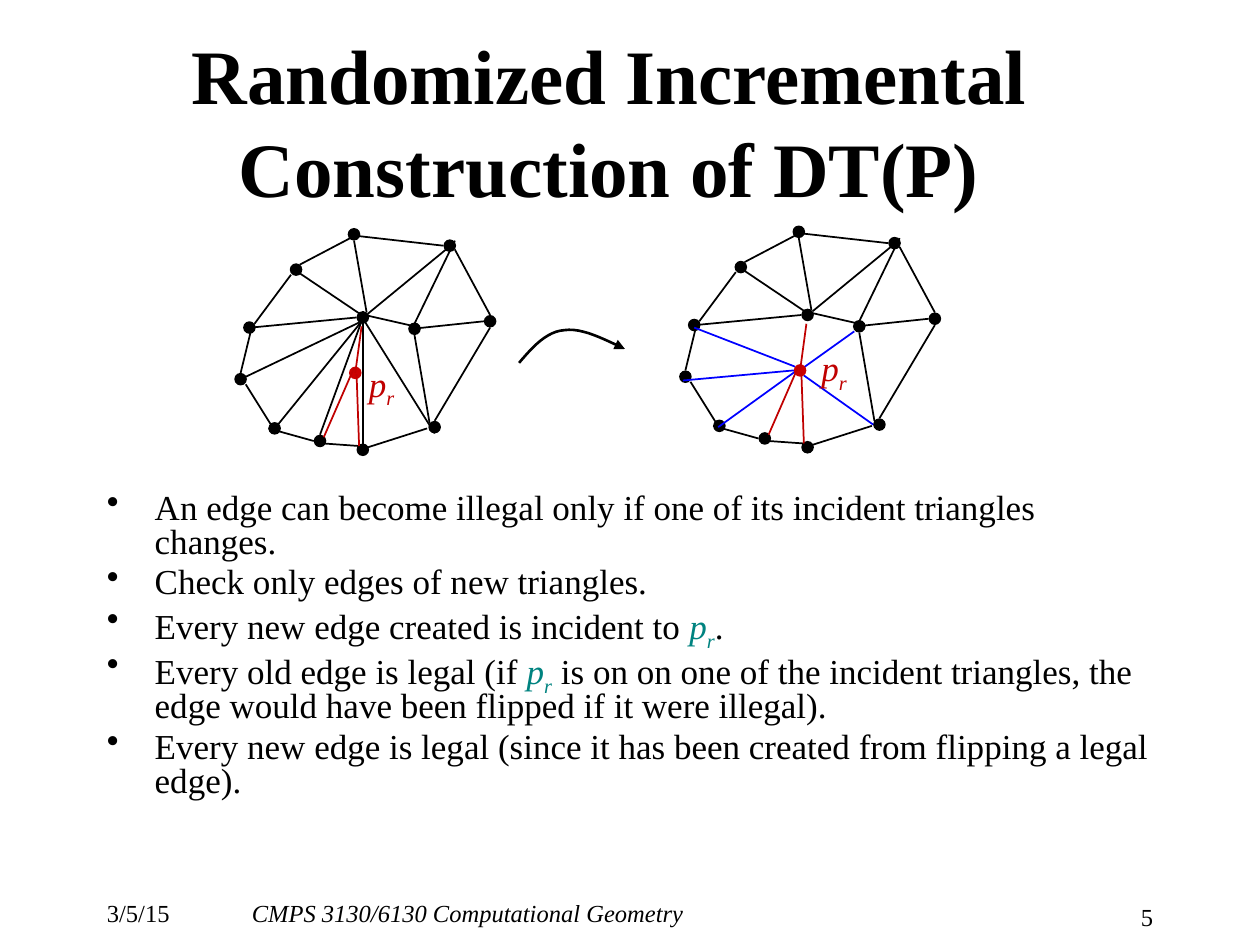
from typing import NamedTuple

from lxml import etree
from pptx import Presentation, util as u
from pptx.dml.color import RGBColor
from pptx.enum import shapes, text
from pptx.oxml.ns import qn

BLACK = RGBColor(0x00, 0x00, 0x00)
RED = RGBColor(0xC0, 0x00, 0x00)
BRIGHT_RED = RGBColor(0xCC, 0x00, 0x00)
BLUE = RGBColor(0x00, 0x00, 0xFF)
TEAL = RGBColor(0x00, 0x83, 0x80)
FONT = "Times New Roman"

# The slide is a grid of 1000 columns and 750 rows
WIDTH, HEIGHT = u.Inches(10), u.Inches(7.5)
COLUMNS, ROWS = 1000, 750
DOT = 10


class Point(NamedTuple):
    col: float
    row: float


class Edge(NamedTuple):
    start: Point
    end: Point
    color: RGBColor = BLACK


class Box(NamedTuple):
    col: float
    row: float
    cols: float
    rows: float


class Piece(NamedTuple):
    words: str
    color: RGBColor = BLACK
    italic: bool = False
    subscript: bool = False


def edges(color: RGBColor, *ends: tuple) -> list[Edge]:
    return [Edge(Point(a, b), Point(c, d), color) for a, b, c, d in ends]


def p_r(color: RGBColor) -> list[Piece]:
    return [Piece("p", color, True), Piece("r", color, True, True)]


# Vertices and edges that both triangulations have
VERTICES = [Point(*at) for at in (
    (218, 340), (191, 301), (198, 260), (235, 214), (288, 252), (329, 261),
    (281, 186), (357, 195), (345, 339), (288, 357), (254, 350), (389, 255))]
COMMON_EDGES = edges(
    BLACK,
    (278, 189, 238, 210), (202, 257, 231, 218), (191, 296, 200, 259),
    (215, 337, 195, 305), (249, 350, 213, 340), (285, 354, 257, 352),
    (339, 340, 292, 355), (329, 266, 341, 336), (285, 249, 329, 259),
    (238, 217, 287, 250), (281, 191, 291, 248), (354, 198, 292, 249),
    (361, 191, 327, 261), (281, 187, 352, 195), (361, 198, 389, 250),
    (389, 260, 345, 334), (384, 255, 327, 261), (199, 260, 283, 252))
NEW_POINT = Point(282, 296)
NEW_EDGES = edges(RED, (282, 296, 287, 259), (257, 347, 281, 292),
                  (285, 354, 283, 297))
# Edges before and after flipping
OLD_EDGES = edges(BLACK, (193, 300, 285, 256), (219, 339, 292, 249),
                  (254, 345, 287, 255), (288, 359, 288, 247),
                  (345, 344, 290, 256))
FLIPPED_EDGES = edges(BLUE, (198, 262, 278, 293), (189, 304, 277, 296),
                      (340, 339, 285, 300), (325, 265, 283, 295),
                      (217, 341, 278, 297))
AFTER_SHIFT = Point(353, -2)

FLIP_CURVE = [[Point(412, 288), Point(423, 275), Point(434, 263), Point(448, 262)],
              [Point(448, 262), Point(462, 260), Point(479, 269), Point(496, 277)]]

BULLETS = [
    [Piece("An edge can become illegal only if one of its incident triangles changes.")],
    [Piece("Check only edges of new triangles.")],
    [Piece("Every new edge created is incident to "), *p_r(TEAL), Piece(".")],
    [Piece("Every old edge is legal (if "), *p_r(TEAL),
     Piece(" is on on one of the incident triangles, the edge would have been "
           "flipped if it were illegal).")],
    [Piece("Every new edge is legal (since it has been created from flipping a legal edge).")],
]


def x(col: float) -> int:
    return round(WIDTH * col / COLUMNS)


def y(row: float) -> int:
    return round(HEIGHT * row / ROWS)


def draw_dot(slide, center: Point, color: RGBColor = BLACK) -> None:
    dot = slide.shapes.add_shape(
        shapes.MSO_SHAPE.OVAL, x(center.col - DOT / 2), y(center.row - DOT / 2),
        x(DOT), y(DOT))
    dot.shadow.inherit = False
    dot.fill.solid()
    dot.fill.fore_color.rgb = color
    dot.line.fill.background()


def draw_edge(slide, edge: Edge, shift: Point) -> None:
    line = slide.shapes.add_connector(
        shapes.MSO_CONNECTOR.STRAIGHT,
        x(edge.start.col + shift.col), y(edge.start.row + shift.row),
        x(edge.end.col + shift.col), y(edge.end.row + shift.row))
    line.line.color.rgb = edge.color
    line.line.width = u.Pt(1)
    etree.SubElement(line._element.spPr, qn("a:effectLst"))


def draw_triangulation(slide, own_edges: list[Edge], shift: Point) -> None:
    for vertex in VERTICES:
        draw_dot(slide, Point(vertex.col + shift.col, vertex.row + shift.row))
    for edge in COMMON_EDGES + own_edges:
        draw_edge(slide, edge, shift)
    draw_dot(slide, Point(NEW_POINT.col + shift.col, NEW_POINT.row + shift.row),
             BRIGHT_RED)
    for edge in NEW_EDGES:
        draw_edge(slide, edge, shift)


def bezier(curve: list[Point], t: float) -> tuple[int, int]:
    weights = ((1 - t) ** 3, 3 * t * (1 - t) ** 2, 3 * t * t * (1 - t), t ** 3)
    return (x(sum(w * p.col for w, p in zip(weights, curve))),
            y(sum(w * p.row for w, p in zip(weights, curve))))


def draw_flip_arrow(slide, steps: int = 12) -> None:
    track = [bezier(curve, step / steps)
             for curve in FLIP_CURVE for step in range(1, steps + 1)]
    builder = slide.shapes.build_freeform(*bezier(FLIP_CURVE[0], 0), scale=1.0)
    builder.add_line_segments(track, close=False)
    arrow = builder.convert_to_shape()
    arrow.shadow.inherit = False
    arrow.fill.background()
    arrow.line.color.rgb = BLACK
    arrow.line.width = u.Pt(1.5)
    etree.SubElement(arrow.line._get_or_add_ln(), qn("a:tailEnd"), type="triangle")


def write(slide, box: Box, paragraphs: list[list[Piece]], size: float,
          align=text.PP_ALIGN.LEFT, bold: bool = False, wrap: bool = True,
          anchor=text.MSO_ANCHOR.TOP, tight: bool = False, bullet: str = "") -> None:
    frame = slide.shapes.add_textbox(
        x(box.col), y(box.row), x(box.cols), y(box.rows)).text_frame
    frame.word_wrap = wrap
    frame.vertical_anchor = anchor
    for index, pieces in enumerate(paragraphs):
        paragraph = frame.add_paragraph() if index else frame.paragraphs[0]
        paragraph.alignment = align
        font = paragraph.font
        font.name, font.size, font.bold = FONT, u.Pt(size), bold
        if tight:
            paragraph.line_spacing = 0.8
            paragraph.space_before = u.Pt(size * 0.2)
        if bullet:
            properties = paragraph._p.get_or_add_pPr()
            indent = x(38)
            properties.set("marL", str(indent))
            properties.set("indent", str(-indent))
            mark = etree.Element(qn("a:buChar"), char=bullet)
            properties.find(qn("a:defRPr")).addprevious(mark)
        for piece in pieces:
            run = paragraph.add_run()
            run.text = piece.words
            # Runs carry the font as well, since some viewers skip paragraph defaults
            run.font.name, run.font.size, run.font.bold = FONT, u.Pt(size), bold
            run.font.color.rgb = piece.color
            run.font.italic = piece.italic
            if piece.subscript:
                run.font._element.set("baseline", "-25000")


def main() -> None:
    deck = Presentation()
    deck.slide_width, deck.slide_height = WIDTH, HEIGHT
    slide = deck.slides.add_slide(deck.slide_layouts[6])

    # Footer
    write(slide, Box(75, 708, 95, 25), [[Piece("3/5/15")]], 14)
    write(slide, Box(190, 708, 634, 25),
          [[Piece("CMPS 3130/6130 Computational Geometry", italic=True)]], 14)
    write(slide, Box(851, 711, 74, 22), [[Piece("5")]], 14, text.PP_ALIGN.RIGHT)

    # Title and statements
    write(slide, Box(71, 33, 825, 125),
          [[Piece("Randomized Incremental Construction of DT(P)")]], 44,
          text.PP_ALIGN.CENTER, bold=True, anchor=text.MSO_ANCHOR.MIDDLE)
    write(slide, Box(75, 387, 850, 300), BULLETS, 20, tight=True, bullet="•")

    # Triangulations before and after flipping
    draw_triangulation(slide, OLD_EDGES, Point(0, 0))
    draw_triangulation(slide, FLIPPED_EDGES, AFTER_SHIFT)
    draw_flip_arrow(slide)
    for label in (Box(283, 286, 42, 37), Box(642, 274, 42, 37)):
        write(slide, label, [p_r(RED)], 20, wrap=False, tight=True)

    deck.save("out.pptx")


if __name__ == "__main__":
    main()
